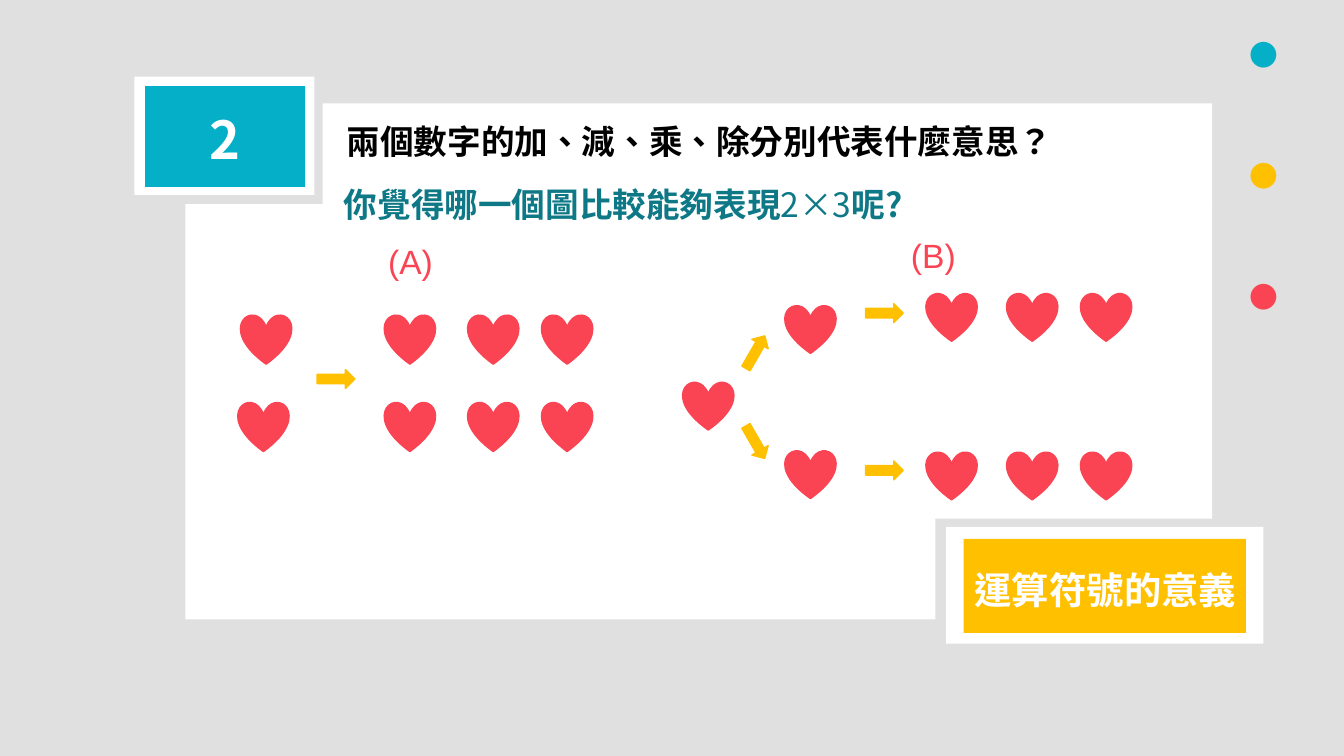
from typing import NamedTuple

from lxml import etree
from pptx import Presentation
from pptx.dml.color import RGBColor
from pptx.enum.shapes import MSO_SHAPE
from pptx.enum.text import MSO_ANCHOR, MSO_AUTO_SIZE, PP_ALIGN
from pptx.oxml.ns import qn
from pptx.util import Inches, Pt

GREY = RGBColor(0xE0, 0xE0, 0xE0)
WHITE = RGBColor(0xFF, 0xFF, 0xFF)
BLACK = RGBColor(0, 0, 0)
BLUE = RGBColor(0x05, 0xAF, 0xC8)
TEAL = RGBColor(0x0E, 0x78, 0x86)
YELLOW = RGBColor(0xFF, 0xC0, 0x00)
RED = RGBColor(0xFA, 0x44, 0x53)
CJK_FONT = "Noto Sans CJK SC"


class Area(NamedTuple):
    left: float
    top: float
    width: float
    height: float


class Panel(NamedTuple):
    area: Area
    color: RGBColor


class Span(NamedTuple):
    text: str
    color: RGBColor
    bold: bool = True


class Arrow(NamedTuple):
    left: float
    top: float
    rotation: int = 270


class Diagram(NamedTuple):
    label: str
    label_area: Area
    heart_height: float
    hearts: list[tuple[float, float]]
    arrows: list[Arrow]


def place(shape, area: Area) -> None:
    shape.left, shape.top, shape.width, shape.height = map(Inches, area)


def add_filled(shapes, kind: MSO_SHAPE, area: Area, color: RGBColor, outlined: bool = False):
    shape = shapes.add_shape(kind, *map(Inches, area))
    shape.shadow.inherit = False
    shape.fill.solid()
    shape.fill.fore_color.rgb = color
    if outlined:
        shape.line.color.rgb = color
        shape.line.width = Pt(0.75)
    else:
        shape.line.fill.background()
    return shape


def write(box, spans: list[Span], size: float, align: PP_ALIGN = PP_ALIGN.LEFT,
          font: str = CJK_FONT, leading: float | None = 1.2) -> None:
    """Fill a text shape; leading is the line height as a multiple of the size."""
    frame = box.text_frame
    frame.word_wrap = True
    frame.auto_size = MSO_AUTO_SIZE.NONE
    frame.vertical_anchor = MSO_ANCHOR.TOP
    para = frame.paragraphs[0]
    para.alignment = align
    if leading:
        para.line_spacing = Pt(size * leading)
    for text, color, bold in spans:
        span = para.add_run()
        span.text = text
        span.font.name = font
        span.font.size = Pt(size)
        span.font.bold = bold
        span.font.color.rgb = color
        properties = span.font._element
        # Traditional Chinese centres its punctuation.
        properties.set("lang", "zh-TW")
        east_asian = etree.Element(qn("a:ea"), typeface=font)
        properties.find(qn("a:latin")).addnext(east_asian)


def add_text(shapes, area: Area, spans: list[Span], size: float, **style) -> None:
    write(shapes.add_textbox(*map(Inches, area)), spans, size, **style)


def add_diagram(page, diagram: Diagram) -> None:
    shapes = page.shapes.add_group_shape().shapes
    for left, top in diagram.hearts:
        area = Area(left, top, 0.38, diagram.heart_height)
        add_filled(shapes, MSO_SHAPE.HEART, area, RED, outlined=True)
    for left, top, rotation in diagram.arrows:
        arrow = add_filled(shapes, MSO_SHAPE.DOWN_ARROW, Area(left, top, 0.14, 0.28),
                           YELLOW, outlined=True)
        arrow.rotation = rotation
    add_text(shapes, diagram.label_area, [Span(diagram.label, RED, False)], 18,
             font="Arial", leading=None)


PANEL_GROUPS = [
    [Panel(Area(1, 0.57, 1.34, 0.88), WHITE), Panel(Area(1.08, 0.64, 1.19, 0.75), BLUE)],
    [Panel(Area(7.04, 3.92, 2.36, 0.87), WHITE), Panel(Area(7.17, 4.01, 2.1, 0.7), YELLOW)],
    [Panel(Area(1.38, 1.52, 7.64, 2.34), WHITE),
     Panel(Area(2.4, 0.77, 6.62, 0.76), WHITE),
     Panel(Area(1.38, 3.85, 5.58, 0.76), WHITE)],
]

DIAGRAMS = [
    Diagram("(A)", Area(2.79, 1.74, 0.63, 0.4), 0.37,
            [(1.79, 2.34), (1.77, 2.99)]
            + [(left, top) for top in (2.34, 2.99) for left in (2.86, 3.48, 4.03)],
            [Arrow(2.43, 2.68)]),
    Diagram("(B)", Area(6.68, 1.7, 0.63, 0.4), 0.36,
            [(5.08, 2.84), (5.84, 2.27), (5.84, 3.35)]
            + [(left, top) for top in (2.18, 3.36) for left in (6.89, 7.49, 8.04)],
            [Arrow(5.55, 2.48, 210), Arrow(5.55, 3.15, 330),
             Arrow(6.51, 2.19), Arrow(6.51, 3.36)]),
]


def main() -> None:
    deck = Presentation()
    deck.slide_width = Inches(10)
    deck.slide_height = Inches(10) * 9 // 16
    page = deck.slides.add_slide(deck.slide_layouts[5])
    page.background.fill.solid()
    page.background.fill.fore_color.rgb = GREY

    add_text(page.shapes, Area(8.23, -0.1, 1.65, 1.01),
             [Span("· ", BLUE), Span("· ", YELLOW), Span("·", RED)], 54,
             align=PP_ALIGN.RIGHT)

    for panels in PANEL_GROUPS:
        group = page.shapes.add_group_shape()
        for area, color in panels:
            add_filled(group.shapes, MSO_SHAPE.RECTANGLE, area, color)

    add_text(page.shapes, Area(7.13, 4.17, 2.19, 0.44), [Span("運算符號的意義", WHITE)], 20,
             align=PP_ALIGN.CENTER)
    add_text(page.shapes, Area(1.14, 0.75, 1.06, 0.57), [Span("2", WHITE)], 28,
             align=PP_ALIGN.CENTER)

    title = page.shapes.title
    place(title, Area(2.48, 0.85, 6.22, 0.4))
    write(title, [Span("兩個數字的加、減、乘、除分別代表什麼意思？", BLACK)], 18)
    # Bring the title in front of the white panels.
    title.element.getparent().append(title.element)

    add_text(page.shapes, Area(2.46, 1.32, 6.22, 0.4),
             [Span("你覺得哪一個圖比較能夠表現", TEAL), Span("2×3", TEAL, False),
              Span("呢?", TEAL)], 18)

    for diagram in DIAGRAMS:
        add_diagram(page, diagram)

    deck.save("out.pptx")


if __name__ == "__main__":
    main()
